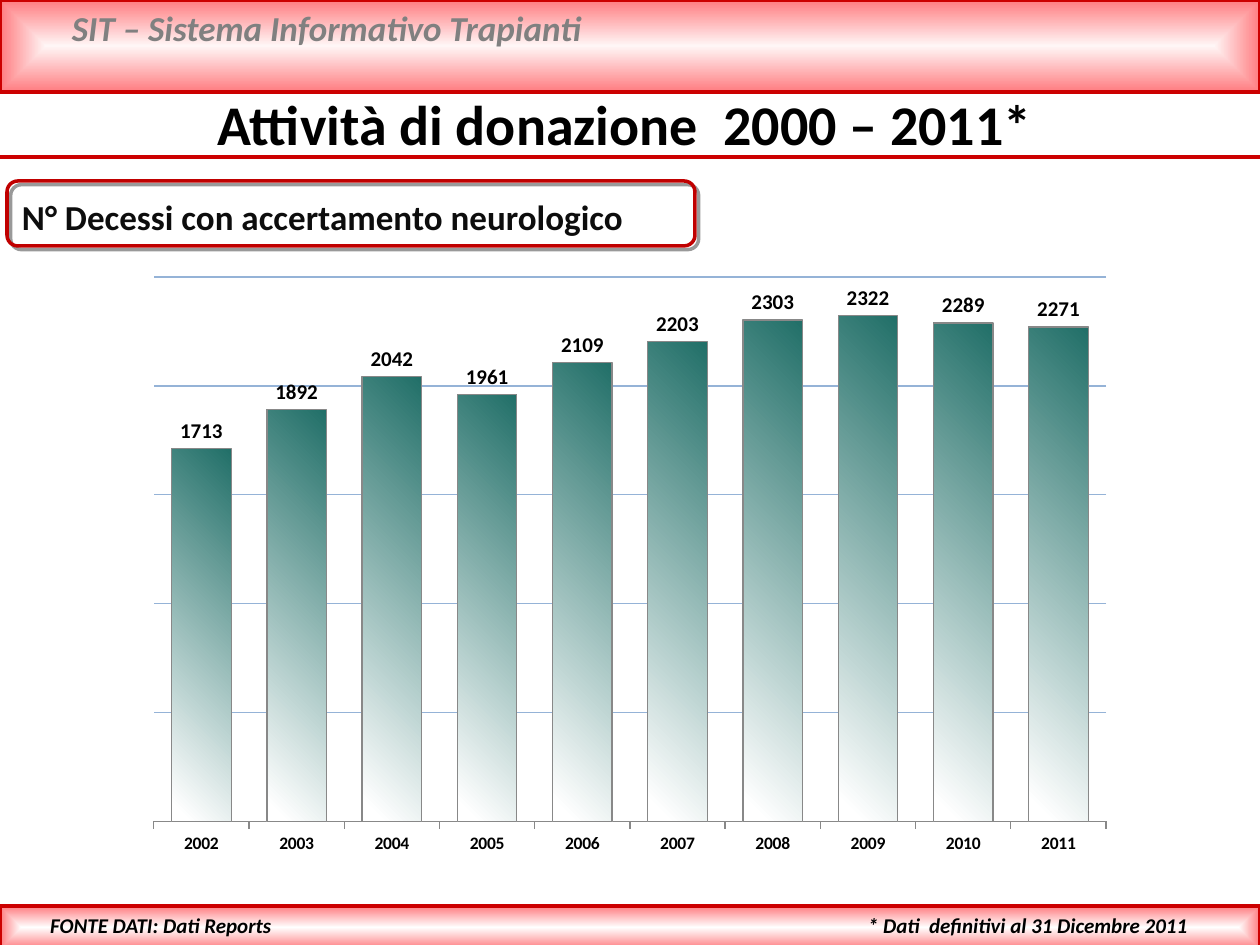
from lxml.etree import SubElement
from pptx import Presentation
from pptx.chart.data import CategoryChartData
from pptx.dml.color import RGBColor
from pptx.enum.chart import XL_CHART_TYPE, XL_LABEL_POSITION, XL_TICK_LABEL_POSITION, XL_TICK_MARK
from pptx.enum.shapes import MSO_CONNECTOR, MSO_SHAPE
from pptx.enum.text import MSO_ANCHOR, PP_ALIGN
from pptx.oxml import parse_xml
from pptx.oxml.ns import nsdecls, qn
from pptx.util import Pt

SCALE = 914400 / 126
COLORS = {
    "red": "CC0000", "frame": "C00000", "pink": "FF7C80", "blush": "FFF6F6",
    "white": "FFFFFF", "black": "000000", "ink": "0D0D0D", "gray": "808080",
    "teal": "216F68", "outline": "888888", "grid": "95B3D7",
}
RGB = {name: RGBColor.from_string(value) for name, value in COLORS.items()}
CENTER_PATH = '<a:path path="shape"><a:fillToRect l="50000" t="50000" r="50000" b="50000"/></a:path>'
DIAGONAL = '<a:lin ang="8100000" scaled="0"/>'


def px(*lengths):
    return [round(length * SCALE) for length in lengths]


def set_gradient(fill, element, stops, direction):
    """Fill with (percent, color name) stops running along the given direction XML."""
    fill.gradient()
    old = element.find(".//" + qn("a:gradFill"))
    stop_xml = "".join(
        f'<a:gs pos="{percent * 1000}"><a:srgbClr val="{COLORS[name]}"/></a:gs>'
        for percent, name in stops)
    old.getparent().replace(old, parse_xml(
        f'<a:gradFill {nsdecls("a")} rotWithShape="1"><a:gsLst>{stop_xml}</a:gsLst>{direction}</a:gradFill>'))


deck = Presentation()
deck.slide_width, deck.slide_height = px(1260, 945)
page = deck.slides.add_slide(deck.slide_layouts[5])

# Header and footer bands
for top, height, middle in [(0, 92, "blush"), (906, 43, "white")]:
    band = page.shapes.add_shape(MSO_SHAPE.RECTANGLE, *px(0, top, 1260, height))
    band.shadow.inherit = False
    set_gradient(band.fill, band._element, [(0, middle), (100, "pink")], CENTER_PATH)
    band.line.color.rgb = RGB["red"]
    band.line.width = Pt(2)

rule = page.shapes.add_connector(MSO_CONNECTOR.STRAIGHT, *px(0, 157, 1260, 157))
rule.line.color.rgb = RGB["red"]
rule.line.width = Pt(2)
SubElement(rule._element.spPr, qn("a:effectLst"))

# Column chart
data = CategoryChartData()
data.categories = [str(year) for year in range(2002, 2012)]
data.add_series("Series 1", [1713, 1892, 2042, 1961, 2109, 2203, 2303, 2322, 2289, 2271])
chart = page.shapes.add_chart(XL_CHART_TYPE.COLUMN_CLUSTERED, *px(134, 265, 992, 605), data).chart
chart.has_legend = False
chart.has_title = False
chart.font.name = "Calibri"
chart.font.size = Pt(10)
chart.font.color.rgb = RGB["black"]

plot_area = chart._chartSpace.chart.plotArea
for old_layout in plot_area.findall(qn("c:layout")):
    plot_area.remove(old_layout)
plot_area.insert(0, parse_xml(
    f'<c:layout {nsdecls("c")}><c:manualLayout><c:layoutTarget val="inner"/>'
    '<c:xMode val="edge"/><c:yMode val="edge"/><c:x val="0.02"/><c:y val="0.02"/>'
    '<c:w val="0.96"/><c:h val="0.9"/></c:manualLayout></c:layout>'))

years = chart.category_axis
years.major_tick_mark = XL_TICK_MARK.OUTSIDE
years.tick_labels.font.bold = True
years.tick_labels.font.size = Pt(10)
years.format.line.color.rgb = RGB["outline"]

deaths = chart.value_axis
deaths.minimum_scale, deaths.maximum_scale, deaths.major_unit = 0, 2500, 500
deaths.tick_label_position = XL_TICK_LABEL_POSITION.NONE
deaths.visible = False
deaths.has_major_gridlines = True
deaths.major_gridlines.format.line.color.rgb = RGB["grid"]
deaths.major_gridlines.format.line.width = Pt(0.75)

plot = chart.plots[0]
plot.gap_width = 60
plot.overlap = -20
plot.vary_by_categories = False
columns = plot.series[0]
set_gradient(columns.format.fill, columns._element, [(0, "teal"), (96, "white")], DIAGONAL)
columns.format.line.color.rgb = RGB["outline"]
columns.format.line.width = Pt(0.75)
plot.has_data_labels = True
labels = plot.data_labels
labels.show_value = True
labels.position = XL_LABEL_POSITION.OUTSIDE_END
labels.font.size = Pt(12)
labels.font.bold = True
labels.font.color.rgb = RGB["black"]

# Frame around the chart heading
frame = page.shapes.add_shape(MSO_SHAPE.ROUNDED_RECTANGLE, *px(7, 181, 688, 65))
frame.fill.background()
frame.line.color.rgb = RGB["frame"]
frame.line.width = Pt(2)
frame.shadow.inherit = False
frame._element.spPr.find(qn("a:effectLst")).append(parse_xml(
    f'<a:outerShdw {nsdecls("a")} blurRad="0" dist="38100" dir="2700000" algn="tl" rotWithShape="0">'
    f'<a:srgbClr val="{COLORS["black"]}"><a:alpha val="40000"/></a:srgbClr></a:outerShdw>'))

# Texts: words, place, left and top inset, size, color, italic, alignment
title = page.shapes.title
title.left, title.top, title.width, title.height = px(0, 84, 1250, 81)
heading, system, source, note = [
    page.shapes.add_textbox(*px(*place))
    for place in [(0, 181, 699, 65), (59, 0, 1131, 55), (34, 907, 250, 38), (855, 907, 405, 38)]]
texts = [
    (title, "Attività di donazione  2000 – 2011*", 13, 6, 32, "black", False, PP_ALIGN.CENTER),
    (heading, "N° Decessi con accertamento neurologico", 22, 15, 20, "ink", False, PP_ALIGN.LEFT),
    (system, "SIT – Sistema Informativo Trapianti", 13, 6, 20, "gray", True, PP_ALIGN.LEFT),
    (source, "FONTE DATI: Dati Reports", 13, 6, 12, "black", True, PP_ALIGN.RIGHT),
    (note, "* Dati  definitivi al 31 Dicembre 2011", 13, 6, 12, "black", True, PP_ALIGN.LEFT),
]
for box, words, left, top, size, color, italic, alignment in texts:
    frame_text = box.text_frame
    frame_text.text = words
    frame_text.word_wrap = box is not source
    frame_text.vertical_anchor = MSO_ANCHOR.TOP
    frame_text.margin_left, frame_text.margin_top = px(left, top)
    para = frame_text.paragraphs[0]
    para.alignment = alignment
    span = para.runs[0]
    span.font.name = "Calibri"
    span.font.size = Pt(size)
    span.font.bold = True
    span.font.italic = italic
    span.font.color.rgb = RGB[color]

deck.save("out.pptx")
